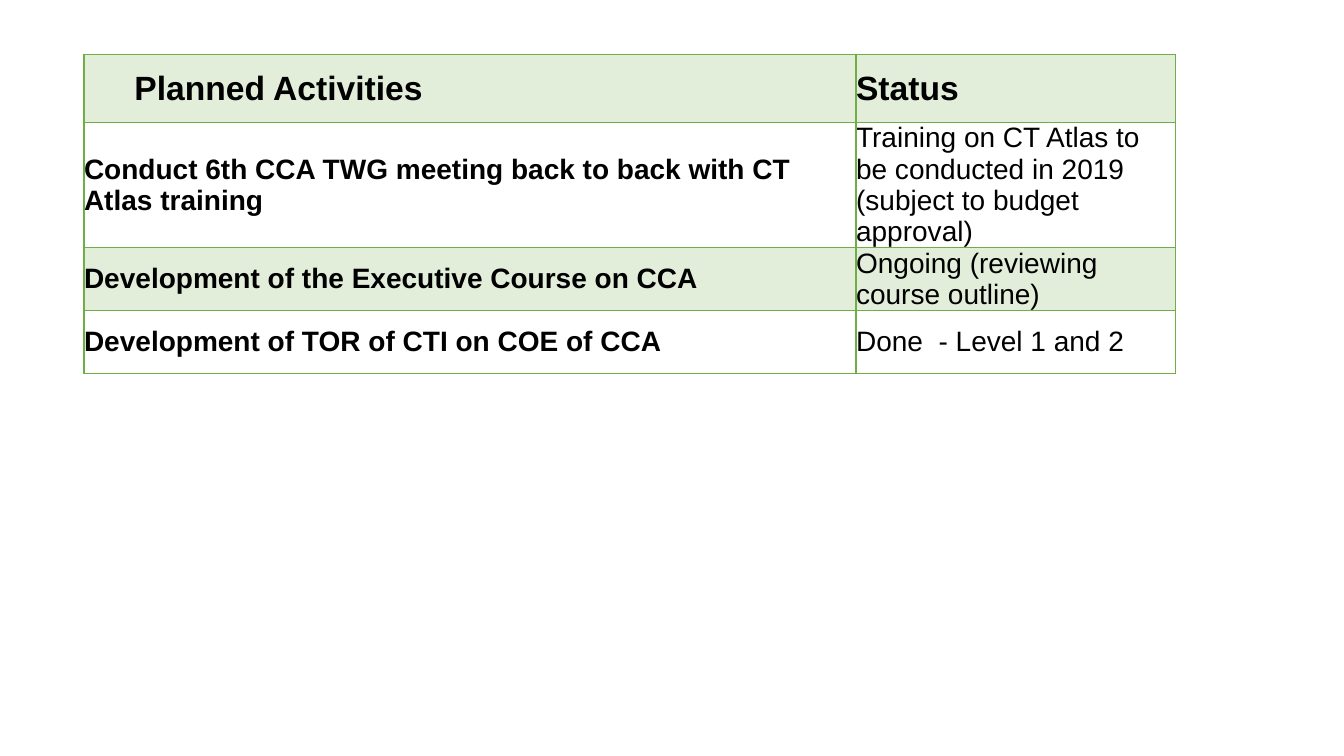
from lxml.etree import SubElement
from pptx import Presentation
from pptx.dml.color import RGBColor
from pptx.enum.text import MSO_ANCHOR
from pptx.oxml.ns import qn
from pptx.util import Pt

GREEN, BLACK = "70AD47", "000000"
TINT_ALPHA = "20000"

ACTIVITIES = [
    ("Planned Activities", "Status"),
    ("Conduct 6th CCA TWG meeting back to back with CT Atlas training",
     "Training on CT Atlas to be conducted in 2019 (subject to budget approval)"),
    ("Development of the Executive Course on CCA",
     "Ongoing (reviewing course outline)"),
    ("Development of TOR of CTI on COE of CCA", "Done  - Level 1 and 2"),
]
COLUMN_WIDTHS = (551.5, 228)
ROW_HEIGHTS = (48.5, 45, 45, 45)
CELL_FORMAT = {
    "margin_left": 0, "margin_right": 0, "margin_top": 0, "margin_bottom": 0,
    "vertical_anchor": MSO_ANCHOR.MIDDLE,
}


def color(hex_value):
    return RGBColor.from_string(hex_value)


def add_borders(cell):
    properties = cell._tc.get_or_add_tcPr()
    for side in ("lnL", "lnR", "lnT", "lnB"):
        border = SubElement(properties, qn(f"a:{side}"), w=str(Pt(1)))
        fill = SubElement(border, qn("a:solidFill"))
        SubElement(fill, qn("a:srgbClr"), val=GREEN)


def fill_cell(cell, tinted):
    if not tinted:
        cell.fill.background()
        return
    cell.fill.solid()
    cell.fill.fore_color.rgb = color(GREEN)
    tint = cell._tc.tcPr.find(f"{qn('a:solidFill')}/{qn('a:srgbClr')}")
    SubElement(tint, qn("a:alpha"), val=TINT_ALPHA)


def write_cell(cell, wording, size, bold):
    for name, value in CELL_FORMAT.items():
        setattr(cell, name, value)
    cell.text = wording
    font = cell.text_frame.paragraphs[0].runs[0].font
    for name, value in {"name": "Arial", "size": Pt(size), "bold": bold}.items():
        setattr(font, name, value)
    font.color.rgb = color(BLACK)


def add_activity_table(slide, left, top):
    table = slide.shapes.add_table(
        len(ACTIVITIES), len(COLUMN_WIDTHS), Pt(left), Pt(top),
        Pt(sum(COLUMN_WIDTHS)), Pt(sum(ROW_HEIGHTS))).table
    table.first_row = table.horz_banding = False
    for column, width in zip(table.columns, COLUMN_WIDTHS):
        column.width = Pt(width)

    # Header and every second row are tinted
    for r, activity in enumerate(ACTIVITIES):
        table.rows[r].height = Pt(ROW_HEIGHTS[r])
        for c, wording in enumerate(activity):
            cell = table.cell(r, c)
            header = r == 0
            write_cell(cell, wording, 24 if header else 20, header or c == 0)
            add_borders(cell)
            fill_cell(cell, tinted=r % 2 == 0)

    # First-line indent of the first heading
    heading = table.cell(0, 0).text_frame.paragraphs[0]
    heading._p.get_or_add_pPr().set("indent", str(Pt(36)))


def main():
    deck = Presentation()
    deck.slide_width, deck.slide_height = Pt(960), Pt(540)
    slide = deck.slides.add_slide(deck.slide_layouts[6])
    add_activity_table(slide, left=60, top=39)
    deck.save("out.pptx")


if __name__ == "__main__":
    main()
